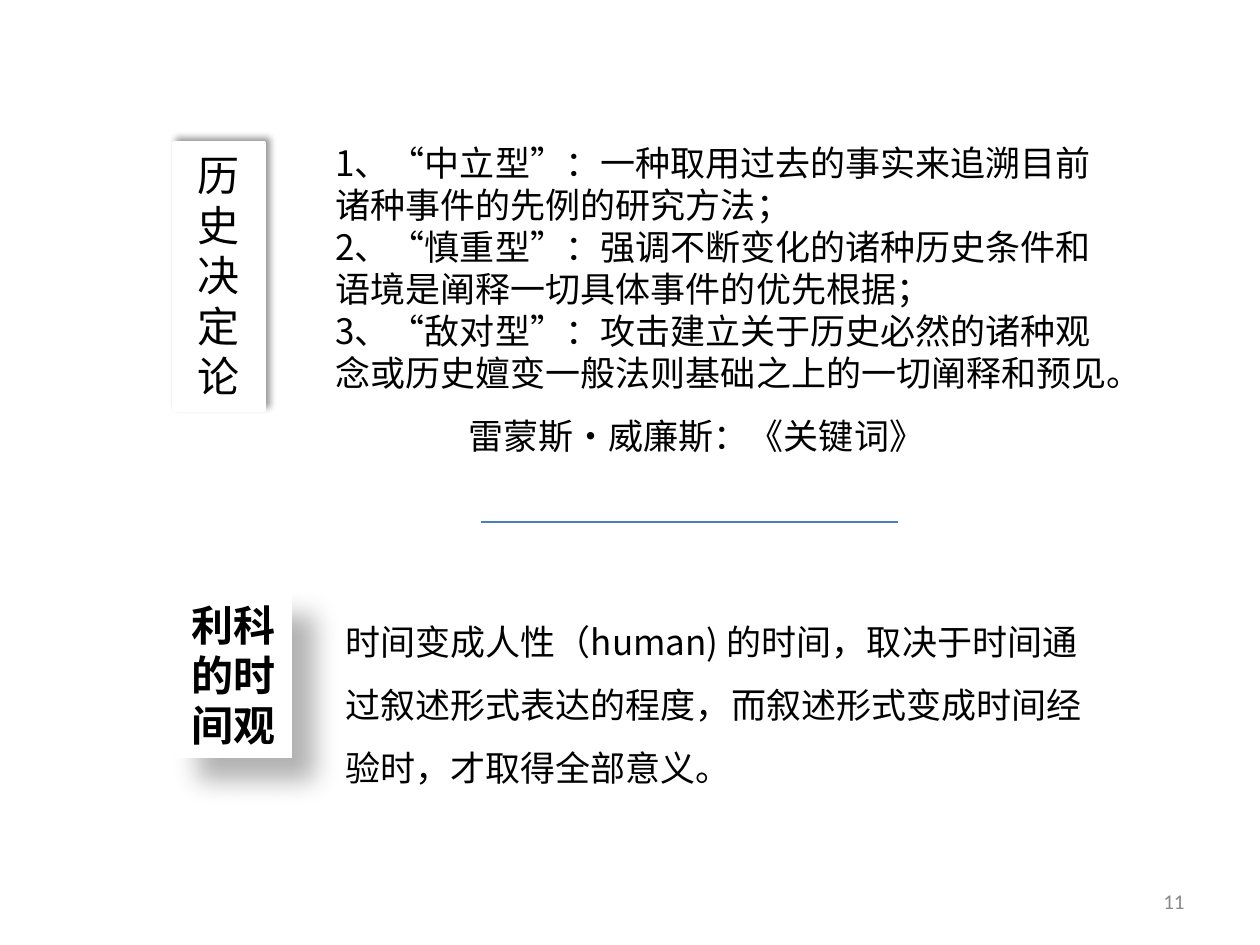
from lxml.etree import SubElement as Sub
from pptx import Presentation
from pptx.dml.color import RGBColor
from pptx.enum.shapes import MSO_CONNECTOR as Conn, MSO_SHAPE as Shape
from pptx.enum.text import MSO_ANCHOR as Anchor, MSO_AUTO_SIZE as Auto, PP_ALIGN as Align
from pptx.oxml.ns import qn
from pptx.util import Pt

PX = 7257.14  # EMU per px, 126 px to the inch
BLACK = RGBColor(0x00, 0x00, 0x00)
WHITE = RGBColor(0xFF, 0xFF, 0xFF)
GREY = RGBColor(0x89, 0x89, 0x89)
BLUE = RGBColor(0x4B, 0x7E, 0xBC)
SANS = "Noto Sans CJK SC"

BODY = {"size": Pt(20), "name": SANS}
LABEL = {"size": Pt(24), "name": SANS}
PAGE = {"size": Pt(12), "name": "Calibri"}

TYPES = [
    "1、“中立型”：一种取用过去的事实来追溯目前诸种事件的先例的研究方法；",
    "2、“慎重型”：强调不断变化的诸种历史条件和语境是阐释一切具体事件的优先根据；",
    "3、“敌对型”：攻击建立关于历史必然的诸种观念或历史嬗变一般法则基础之上的一切阐释和预见。",
]
SOURCE = "雷蒙斯·威廉斯：《关键词》"
TIME = ("时间变成人性（human) 的时间，取决于时间通过叙述形式表达的程度，"
        "而叙述形式变成时间经验时，才取得全部意义。")


def emu(*vals):
    return [round(v * PX) for v in vals]


def put(item, form):
    for key, val in form.items():
        setattr(item, key, val)


def write(shape, lines, font, color=BLACK, para=None, anchor=Anchor.TOP, auto=Auto.SHAPE_TO_FIT_TEXT):
    """Fill a shape with one paragraph per line."""
    frame = shape.text_frame
    put(frame, {"word_wrap": True, "vertical_anchor": anchor, "auto_size": auto})
    for i, line in enumerate(lines):
        par = frame.add_paragraph() if i else frame.paragraphs[0]
        put(par, para or {})
        run = par.add_run()
        run.text = line
        put(run.font, font)
        run.font.color.rgb = color
        Sub(run._r.get_or_add_rPr(), qn("a:ea"), typeface=font["name"])
    return frame.paragraphs


def add_text(slide, box, lines, font, **form):
    return write(slide.shapes.add_textbox(*emu(*box)), lines, font, **form)


def cast(shape, alpha, blur, dist, angle):
    """Outer shadow: alpha in percent, blur and dist in points, angle in degrees."""
    shape.shadow.inherit = False
    effects = shape._element.spPr.find(qn("a:effectLst"))
    outer = Sub(effects, qn("a:outerShdw"), blurRad=str(Pt(blur)), dist=str(Pt(dist)),
                dir=str(angle * 60000), algn="tl", rotWithShape="0")
    tint = Sub(outer, qn("a:srgbClr"), val=str(BLACK))
    Sub(tint, qn("a:alpha"), val=str(alpha * 1000))


def add_label(slide, box, lines, shade, edge=None, bold=False):
    card = slide.shapes.add_shape(Shape.RECTANGLE, *emu(*box))
    card.fill.solid()
    card.fill.fore_color.rgb = WHITE
    if edge:
        card.line.color.rgb = WHITE
        card.line.width = Pt(edge)
    else:
        card.line.fill.background()
    cast(card, *shade)
    write(card, lines, LABEL | {"bold": bold}, para={"alignment": Align.CENTER})


def add_rule(slide, left, right, y):
    rule = slide.shapes.add_connector(Conn.STRAIGHT, *emu(left, y, right, y))
    rule.line.color.rgb = BLUE
    rule.line.width = Pt(0.75)
    Sub(rule._element.spPr, qn("a:effectLst"))


def main():
    deck = Presentation()
    deck.slide_width, deck.slide_height = emu(1260, 945)
    slide = deck.slides.add_slide(deck.slide_layouts[6])

    # Page number
    add_text(slide, (903, 876, 294, 50), ["11"], PAGE, color=GREY,
             para={"alignment": Align.RIGHT}, anchor=Anchor.MIDDLE, auto=Auto.NONE)

    # Historical determinism: three types and their source
    pars = add_text(slide, (323, 135, 814, 331), TYPES + [SOURCE], BODY)
    pars[-1].space_before = Pt(12)
    pars[-1]._p.get_or_add_pPr().set("marL", str(*emu(133)))
    add_label(slide, (174, 143, 90, 267), ["历史决定论"], (40, 4, 3, 315), edge=2)

    # View of time
    add_text(slide, (333, 593, 786, 204), [TIME], BODY, para={"line_spacing": 1.5})
    add_label(slide, (175, 593, 117, 165), ["利科", "的时间观"], (30, 15, 18, 45), bold=True)

    # Divider between the parts
    add_rule(slide, 481, 898, 522)

    deck.save("out.pptx")


if __name__ == "__main__":
    main()
